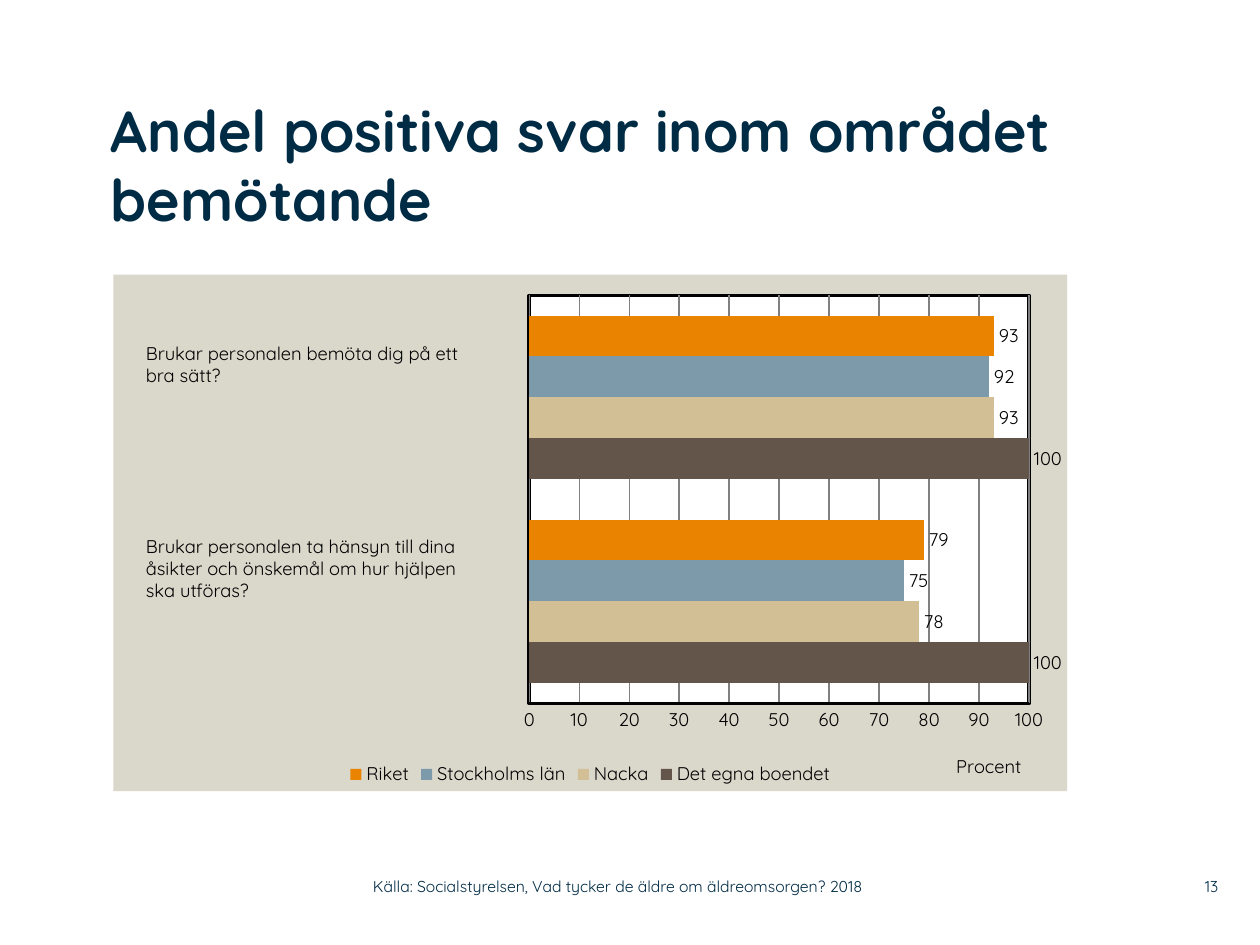
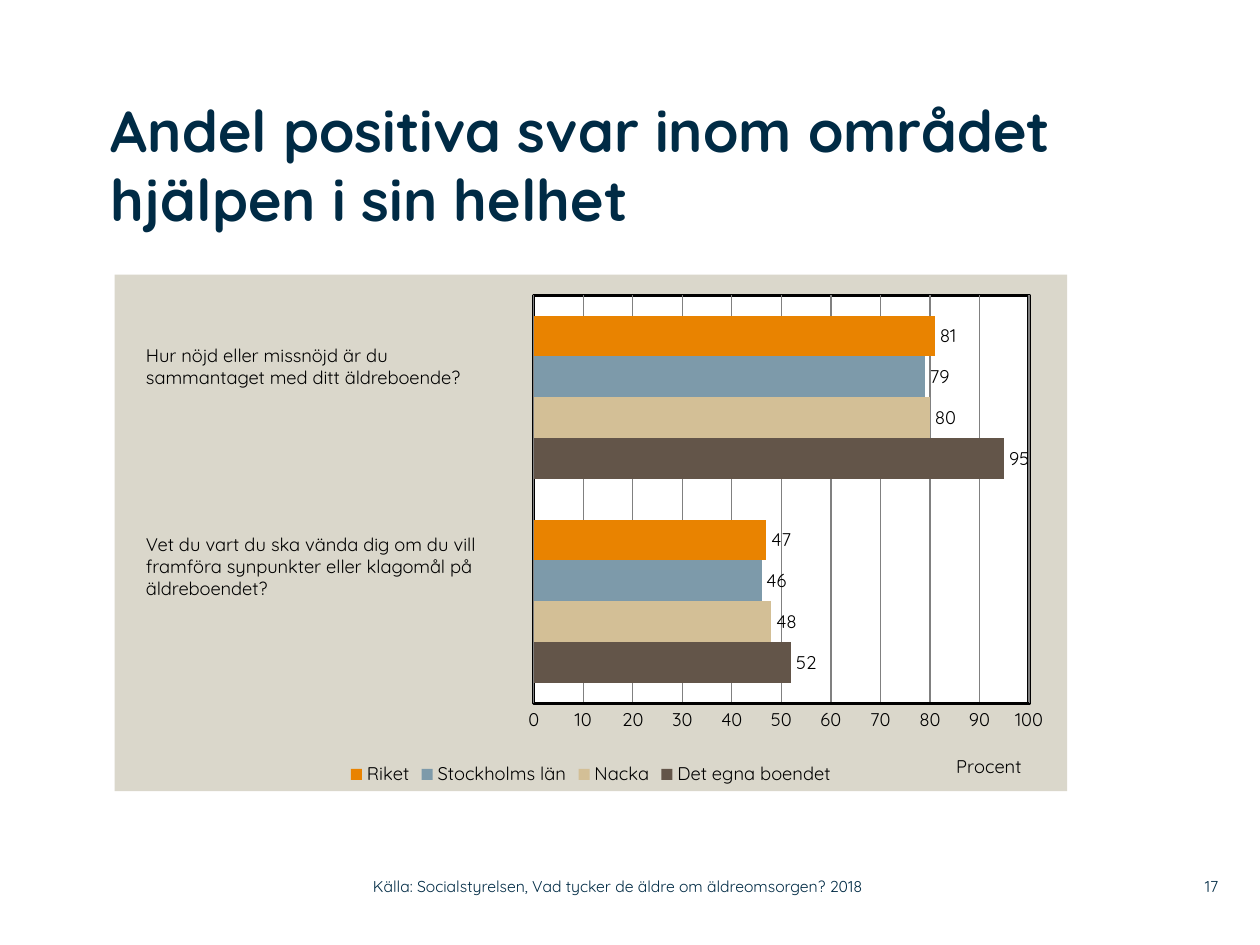
"""Build two survey slides, each with a bar chart of positive answers."""
import pptx
import pptx.chart.data
import pptx.dml.color
import pptx.enum.chart
import pptx.enum.text
import pptx.oxml
import pptx.oxml.ns
import pptx.util

Inches, Pt = pptx.util.Inches, pptx.util.Pt
ink = pptx.dml.color.RGBColor.from_string
enum = pptx.enum.chart
Align, Anchor = pptx.enum.text.PP_ALIGN, pptx.enum.text.MSO_ANCHOR
NS = pptx.oxml.ns.nsdecls("c", "a")
FACE, NAVY, BLACK = "Quicksand", "002B45", "000000"
SOURCE = "Källa: Socialstyrelsen, Vad tycker de äldre om äldreomsorgen? 2018"
LOOKS = {
    "title": {"name": FACE, "size": Pt(33), "bold": True},
    "body": {"name": FACE, "size": Pt(10.5), "bold": False},
    "foot": {"name": FACE, "size": Pt(9), "bold": False},
}
GROUPS = [("Det egna boendet", "635549"), ("Nacka", "D3BF96"),
          ("Stockholms län", "7D9AAA"), ("Riket", "E98300")]
SLIDES = [
    {"title": "Andel positiva svar inom området bemötande", "page": "13",
     "left": 0.9, "plot": 0.436,
     "asks": [(2.67, ["Brukar personalen bemöta dig på ett", "bra sätt?"]),
              (4.2, ["Brukar personalen ta hänsyn till dina",
                     "åsikter och önskemål om hur hjälpen", "ska utföras?"])],
     "values": [(100, 100), (78, 93), (75, 92), (79, 93)]},
    {"title": "Andel positiva svar inom området hjälpen i sin helhet", "page": "17",
     "left": 0.91, "plot": 0.44,
     "asks": [(2.68, ["Hur nöjd eller missnöjd är du",
                      "sammantaget med ditt äldreboende?"]),
              (4.18, ["Vet du vart du ska vända dig om du vill framföra "
                      "synpunkter eller klagomål på äldreboendet?"])],
     "values": [(52, 95), (48, 80), (46, 79), (47, 81)]},
]


def write(shape, box, lines, look, color, pad=0, anchor=Anchor.TOP, align=Align.LEFT):
    """Place a text shape and fill it with styled paragraphs."""
    shape.left, shape.top, shape.width, shape.height = map(Inches, box)
    frame = shape.text_frame
    frame.text = "\n".join(lines)
    sides = {"margin_left": 2 * pad, "margin_right": 2 * pad,
             "margin_top": pad, "margin_bottom": pad}
    for key, value in sides.items():
        setattr(frame, key, Inches(value))
    frame.word_wrap, frame.vertical_anchor = True, anchor
    frame.auto_size = pptx.enum.text.MSO_AUTO_SIZE.NONE
    for para in frame.paragraphs:
        para.alignment = align
        for key, value in LOOKS[look].items():
            setattr(para.runs[0].font, key, value)
        para.runs[0].font.color.rgb = ink(color)


def layout(parent, index, marks):
    """Give a chart part a manual layout."""
    old = parent.find(pptx.oxml.ns.qn("c:layout"))
    if old is not None:
        parent.remove(old)
    rows = "".join(f'<c:{key} val="{value}"/>' for key, value in marks.items())
    parent.insert(index, pptx.oxml.parse_xml(
        f"<c:layout {NS}><c:manualLayout>{rows}</c:manualLayout></c:layout>"))


deck = pptx.Presentation()
deck.slide_width, deck.slide_height = Inches(10), Inches(7.5)

for page in SLIDES:
    slide = deck.slides.add_slide(deck.slide_layouts[5])

    data = pptx.chart.data.CategoryChartData()
    data.categories = ["1", "2"]
    for (name, color), values in zip(GROUPS, page["values"]):
        data.add_series(name, values)
    left = page["left"]
    chart = slide.shapes.add_chart(
        enum.XL_CHART_TYPE.BAR_CLUSTERED, Inches(left), Inches(2.18),
        Inches(8.47 - left), Inches(4.1), data).chart
    chart.has_title = False
    chart.has_legend = True
    chart.legend.position = enum.XL_LEGEND_POSITION.BOTTOM
    chart.legend.include_in_layout = False

    plot = chart.plots[0]
    plot.gap_width, plot.overlap, plot.vary_by_categories = 100, 0, False
    plot.has_data_labels = True
    labels = plot.data_labels
    labels.show_value = True
    labels.position = enum.XL_LABEL_POSITION.OUTSIDE_END
    for series, (name, color) in zip(plot.series, GROUPS):
        series.format.fill.solid()
        series.format.fill.fore_color.rgb = ink(color)

    chart.category_axis.visible = False
    axis = chart.value_axis
    axis.minimum_scale, axis.maximum_scale, axis.major_unit = 0, 100, 10
    axis.major_tick_mark = enum.XL_TICK_MARK.NONE
    axis.has_major_gridlines = True
    for line, color, width in [(axis.format.line, BLACK, 2),
                               (axis.major_gridlines.format.line, "808080", 0.75)]:
        line.color.rgb, line.width = ink(color), Pt(width)
    axis.axis_title.text_frame.text = "Procent"
    head = axis.axis_title.text_frame.paragraphs[0].runs[0].font
    for font in (chart.font, chart.legend.font, labels.font, axis.tick_labels.font, head):
        for key, value in LOOKS["body"].items():
            setattr(font, key, value)
        font.color.rgb = ink(BLACK)

    area = chart.element.chart.plotArea
    layout(area, 0, {"layoutTarget": "inner", "xMode": "edge", "yMode": "edge",
                     "x": page["plot"], "y": 0.04, "w": 0.96 - page["plot"], "h": 0.79})
    layout(axis.axis_title.element if hasattr(axis.axis_title, "element")
           else area.find(".//" + pptx.oxml.ns.qn("c:title")), 1,
           {"xMode": "edge", "yMode": "edge", "x": 0.88, "y": 0.92})
    paint = (f'<c:spPr {NS}><a:solidFill><a:srgbClr val="%s"/></a:solidFill>'
             '<a:ln w="25400">%s</a:ln></c:spPr>')
    edge = f'<a:solidFill><a:srgbClr val="{BLACK}"/></a:solidFill>'
    area.append(pptx.oxml.parse_xml(paint % ("FFFFFF", edge)))
    chart.element.chart.addnext(pptx.oxml.parse_xml(paint % ("DAD7CB", "<a:noFill/>")))

    write(slide.shapes.title, (0.88, 0.75, 7.6, 1.42), [page["title"]], "title", NAVY)
    for top, lines in page["asks"]:
        write(slide.shapes.add_textbox(0, 0, 0, 0), (1.06, top, 2.98, 0.63),
              lines, "body", BLACK, pad=0.05)
    for x, width, text, align in [(9.2, 0.47, page["page"], Align.RIGHT),
                                  (2.96, 4.43, SOURCE, Align.LEFT)]:
        write(slide.shapes.add_textbox(0, 0, 0, 0), (x, 6.89, width, 0.29),
              [text], "foot", NAVY, anchor=Anchor.MIDDLE, align=align)

deck.save("out.pptx")
